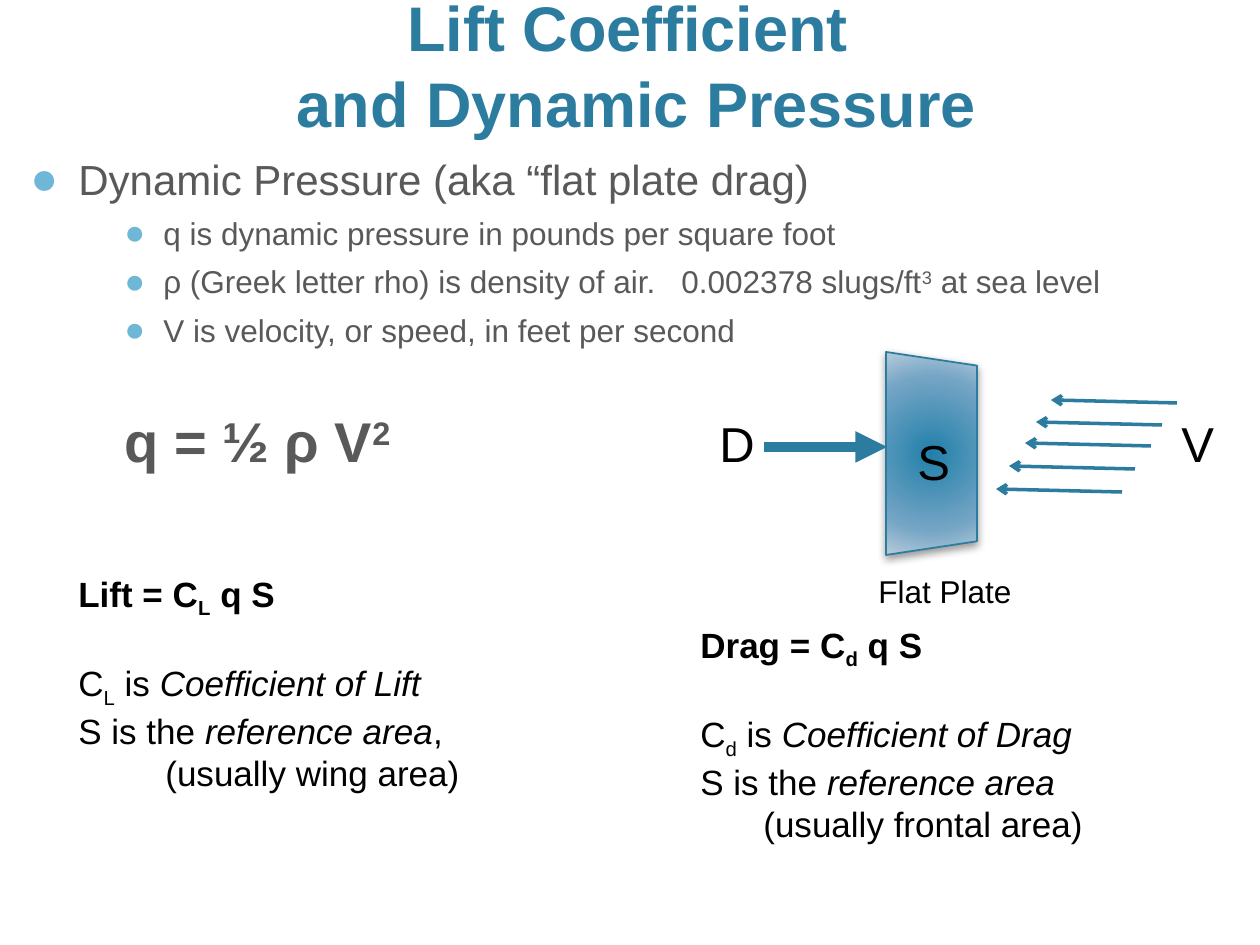
from lxml import etree
from pptx import Presentation
from pptx import util as u
from pptx.dml.color import RGBColor
from pptx.enum import shapes, text
from pptx.oxml import parse_xml
from pptx.oxml.ns import nsdecls, qn

SCALE = 914400 / 126
TEAL, SKY, GREY, BLACK = "2C7C9F", "6FB7D7", "595959", "000000"
BOLD, ITALIC = {"bold": True}, {"italic": True}
SUB, SUP = {"baseline": -25000}, {"baseline": 30000}


def px(length):
    """Turn px into EMU."""
    return u.Emu(round(length * SCALE))


def colour(value):
    """Turn a hex string into a colour."""
    return RGBColor.from_string(value)


def add_spans(para, spans, size, ink, **shared):
    """Add (text, format) spans to a paragraph."""
    for words, own in spans:
        span = para.add_run()
        span.text = words
        span.font.color.rgb = colour(ink)
        formats = {"name": "Arial", "size": u.Pt(size), **shared, **own}
        baseline = formats.pop("baseline", None)
        for key, value in formats.items():
            setattr(span.font, key, value)
        if baseline:
            span.font._element.set("baseline", str(baseline))


def add_bullet(para):
    """Give a paragraph a round sky-blue bullet."""
    props = para._p.get_or_add_pPr()
    holder = etree.SubElement(props, qn("a:buClr"))
    etree.SubElement(holder, qn("a:srgbClr"), val=SKY)
    etree.SubElement(props, qn("a:buSzPct"), val="110000")
    etree.SubElement(props, qn("a:buFont"), typeface="Arial")
    etree.SubElement(props, qn("a:buChar"), char="●")


def indent(para, margin, hanging=0):
    """Set the left margin and hanging indent of a paragraph."""
    props = para._p.get_or_add_pPr()
    props.set("marL", str(px(margin)))
    props.set("indent", str(px(-hanging)))


def add_box(slide, left, top, width, height, wrap=True):
    """Add a text box and return its text frame."""
    frame = slide.shapes.add_textbox(*map(px, (left, top, width, height))).text_frame
    frame.word_wrap = wrap
    return frame


def add_label(slide, words, left, top, width, height, size=28):
    """Add a one-line black label."""
    frame = add_box(slide, left, top, width, height, wrap=False)
    add_spans(frame.paragraphs[0], [(words, {})], size, BLACK)


def add_arrow(slide, start, end, weight, head):
    """Add a teal arrow between two points."""
    arrow = slide.shapes.add_connector(
        shapes.MSO_CONNECTOR.STRAIGHT, *map(px, (*start, *end)))
    arrow.line.color.rgb = colour(TEAL)
    arrow.line.width = u.Pt(weight)
    etree.SubElement(arrow.line._get_or_add_ln(), qn("a:tailEnd"), type=head)
    etree.SubElement(arrow._element.spPr, qn("a:effectLst"))


def add_title(slide, words):
    """Place and format the title."""
    title = slide.shapes.title
    place = dict(left=82, top=43, width=1109, height=103)
    for key, value in place.items():
        setattr(title, key, px(value))
    frame = title.text_frame
    frame.vertical_anchor = text.MSO_ANCHOR.BOTTOM
    frame.auto_size = text.MSO_AUTO_SIZE.NONE
    para = frame.paragraphs[0]
    para.alignment = text.PP_ALIGN.CENTER
    first, second = words
    add_spans(para, [(first, BOLD)], 36, TEAL)
    para.add_line_break()
    add_spans(para, [(second, BOLD)], 36, TEAL)


def add_body(slide):
    """Add the bulleted notes and the pressure formula."""
    frame = add_box(slide, 18, 147, 1183, 369)
    para = frame.paragraphs[0]
    indent(para, 48, 48)
    add_bullet(para)
    add_spans(para, [("Dynamic Pressure (aka “flat plate drag)", {})], 24, GREY)
    points = [
        [("q is dynamic pressure in pounds per square foot", {})],
        [("ρ (Greek letter rho) is density of air.   0.002378 slugs/ft", {}),
         ("3", SUP), (" at sea level", {})],
        [("V is velocity, or speed, in feet per second", {})],
    ]
    for spans in points:
        para = frame.add_paragraph()
        indent(para, 133, 39)
        para.space_before = u.Pt(6)
        add_bullet(para)
        add_spans(para, spans, 18, GREY)
    para = frame.add_paragraph()
    indent(para, 94)
    para.space_before = u.Pt(33)
    add_spans(para, [("q = ½ ρ V", {}), ("2", SUP)], 32, GREY, **BOLD)


def add_plate(slide):
    """Add the shaded flat plate, seen at an angle."""
    plate = slide.shapes.add_shape(
        shapes.MSO_SHAPE.TRAPEZOID, *map(px, (830, 408, 203, 91)))
    plate.rotation = 90
    plate.adjustments[0] = 0.15
    plate.line.color.rgb = colour(TEAL)
    plate.line.width = u.Pt(1)
    plate.shadow.inherit = False
    plate.fill.gradient()
    props = plate._element.spPr
    stops = "".join(
        f'<a:gs pos="{place * 1000}"><a:srgbClr val="{value}"/></a:gs>'
        for place, value in ((0, "2180AA"), (69, "75A5C5"), (100, "B8CCDC")))
    sides = " ".join(f'{side}="100000"' for side in "ltrb")
    props.replace(props.find(qn("a:gradFill")), parse_xml(
        f'<a:gradFill {nsdecls("a")} rotWithShape="1"><a:gsLst>{stops}</a:gsLst>'
        f'<a:path path="circle"><a:fillToRect {sides}/></a:path></a:gradFill>'))
    props.find(qn("a:effectLst")).append(parse_xml(
        f'<a:outerShdw {nsdecls("a")} blurRad="{u.Pt(5)}" dist="{u.Pt(2)}" '
        f'dir="5400000" rotWithShape="0"><a:srgbClr val="{BLACK}">'
        '<a:alpha val="40000"/></a:srgbClr></a:outerShdw>'))


def add_equation(slide, left, top, name, letter, area, use, margin):
    """Add a force equation with the meaning of its terms."""
    frame = add_box(slide, left, top, 503, 267)
    lines = [
        [(f"{name} = C", BOLD), (letter, {**BOLD, **SUB}), (" q S", BOLD)],
        [("C", {}), (letter, SUB), (" is ", {}), (f"Coefficient of {name}", ITALIC)],
        [("S is the ", {}), ("reference area", ITALIC), *area],
        [(use, {})],
    ]
    paras = [frame.paragraphs[0]] + [frame.add_paragraph() for _ in lines[1:]]
    for para, spans in zip(paras, lines):
        add_spans(para, spans, 20, BLACK)
    paras[1].space_before = u.Pt(24)
    indent(paras[-1], margin)


def main():
    """Build the slide and save it."""
    deck = Presentation()
    deck.slide_width, deck.slide_height = px(1260), px(945)
    slide = deck.slides.add_slide(deck.slide_layouts[5])
    add_title(slide, ("Lift Coefficient ", "and Dynamic Pressure"))
    add_body(slide)
    add_plate(slide)
    for x, y in ((1177, 403), (1162, 425), (1151, 446), (1135, 469), (1122, 492)):
        add_arrow(slide, (x, y), (x - 126, y - 3), 2, "arrow")
    add_arrow(slide, (764, 447), (887, 447), 6, "triangle")
    add_label(slide, "V", 1169, 407, 58, 72)
    add_label(slide, "D", 707, 407, 62, 72)
    add_label(slide, "S", 905, 425, 58, 72)
    add_label(slide, "Flat Plate", 866, 566, 160, 50, size=18)
    add_equation(slide, 688, 617, "Drag", "d", [], "(usually frontal area)", 63)
    add_equation(slide, 66, 566, "Lift", "L", [(",", {})], "(usually wing area)", 87)
    deck.save("out.pptx")


if __name__ == "__main__":
    main()
